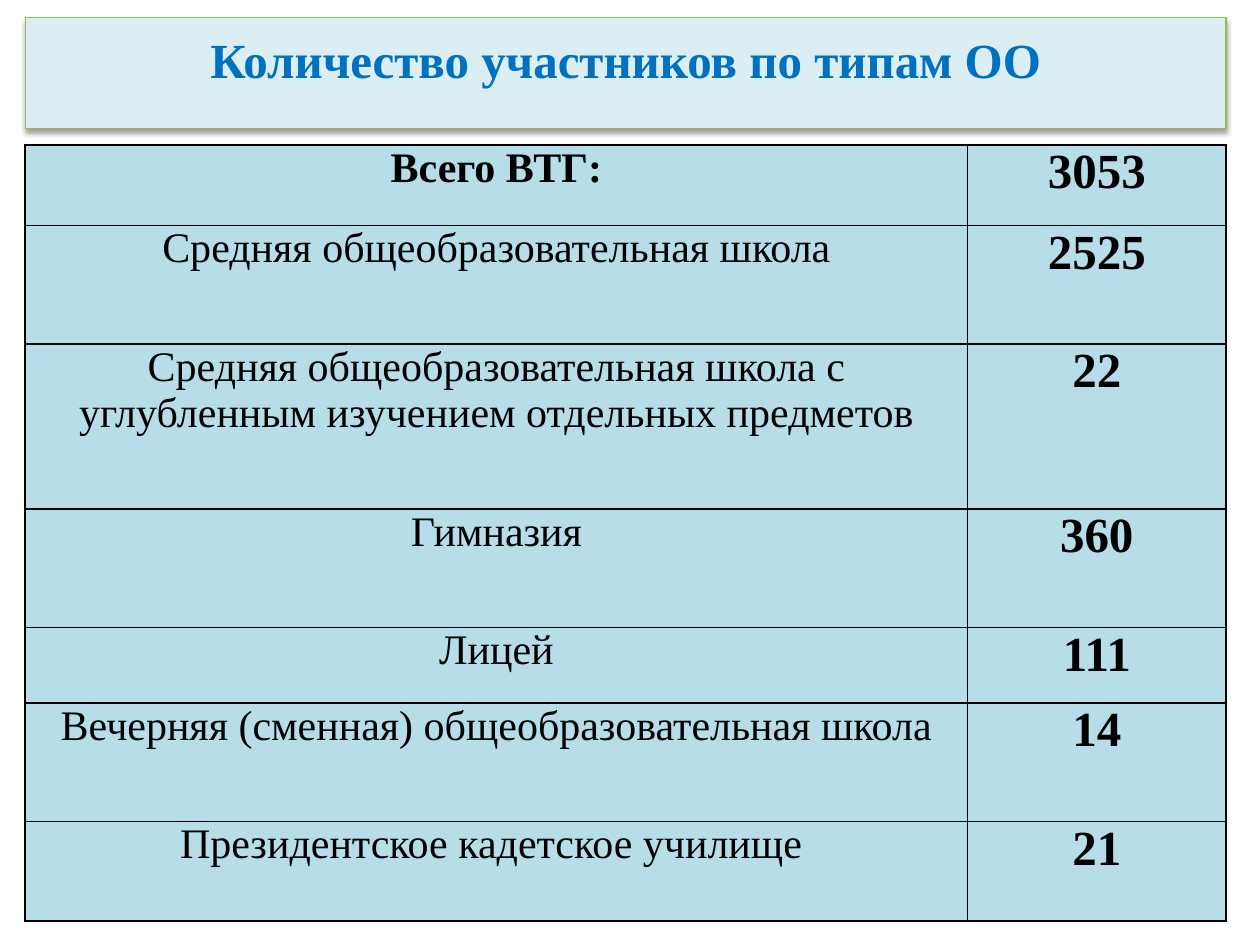
import dataclasses

import lxml.etree
import pptx
import pptx.dml.color
import pptx.enum.text
import pptx.oxml
import pptx.oxml.ns
import pptx.presentation
import pptx.slide
import pptx.table
import pptx.text.text
import pptx.util

Inches = pptx.util.Inches
Pt = pptx.util.Pt

FONT = "Times New Roman"
COLORS = {
    "title": "0070C0",
    "band": "DBEEF4",
    "edge": "98B955",
    "cell": "B7DEE8",
    "ink": "000000",
}
LEFT, WIDTH = 0.2, 9.53
COLS = (7.48, 2.05)


@dataclasses.dataclass
class Row:
    label: str
    count: int
    height: float
    bold: bool = False


ROWS = [
    Row("Всего ВТГ:", 3053, 0.64, True),
    Row("Средняя общеобразовательная школа", 2525, 0.94),
    Row("Средняя общеобразовательная школа с углубленным изучением отдельных предметов", 22, 1.31),
    Row("Гимназия", 360, 0.94),
    Row("Лицей", 111, 0.6),
    Row("Вечерняя (сменная) общеобразовательная школа", 14, 0.94),
    Row("Президентское кадетское училище ", 21, 0.79),
]


def shade(name: str) -> pptx.dml.color.RGBColor:
    return pptx.dml.color.RGBColor.from_string(COLORS[name])


def write(frame: pptx.text.text.TextFrame, text: str, *, size: int,
          color: str = "ink", bold: bool = False) -> None:
    line = frame.paragraphs[0]
    line.alignment = pptx.enum.text.PP_ALIGN.CENTER
    run = line.add_run()
    run.text = text
    run.font.name = FONT
    run.font.size = Pt(size)
    run.font.bold = bold
    run.font.color.rgb = shade(color)


def draw_title(slide: pptx.slide.Slide) -> None:
    title = slide.shapes.title
    title.left, title.top = Inches(LEFT), Inches(0.14)
    title.width, title.height = Inches(WIDTH), Inches(0.88)
    title.fill.solid()
    title.fill.fore_color.rgb = shade("band")
    title.line.color.rgb = shade("edge")
    title.line.width = Pt(0.75)
    title.element.spPr.append(pptx.oxml.parse_xml(
        f'<a:effectLst {pptx.oxml.ns.nsdecls("a")}>'
        f'<a:outerShdw blurRad="{Pt(3.1)}" dist="{Pt(1.6)}" dir="5400000" rotWithShape="0">'
        f'<a:srgbClr val="{COLORS["ink"]}"><a:alpha val="38000"/></a:srgbClr>'
        '</a:outerShdw></a:effectLst>'))
    frame = title.text_frame
    frame.auto_size = pptx.enum.text.MSO_AUTO_SIZE.NONE
    frame.vertical_anchor = pptx.enum.text.MSO_ANCHOR.TOP
    frame.margin_top = Inches(0.09)
    write(frame, "Количество участников по типам ОО", size=28, color="title", bold=True)


def add_edges(cell: pptx.table._Cell) -> None:
    props = cell._tc.get_or_add_tcPr()
    for spot, side in enumerate(("lnL", "lnR", "lnT", "lnB")):
        props.insert(spot, pptx.oxml.parse_xml(
            f'<a:{side} {pptx.oxml.ns.nsdecls("a")} w="{Pt(1)}"><a:solidFill>'
            f'<a:srgbClr val="{COLORS["ink"]}"/></a:solidFill></a:{side}>'))


def draw_cell(cell: pptx.table._Cell, text: str, size: int, bold: bool) -> None:
    cell.margin_left = cell.margin_right = Inches(0.07)
    cell.margin_top = cell.margin_bottom = 0
    cell.fill.solid()
    cell.fill.fore_color.rgb = shade("cell")
    add_edges(cell)
    write(cell.text_frame, text, size=size, bold=bold)


def draw_table(slide: pptx.slide.Slide) -> None:
    height = sum(row.height for row in ROWS)
    table = slide.shapes.add_table(
        len(ROWS), len(COLS), Inches(LEFT), Inches(1.15), Inches(WIDTH), Inches(height)).table
    for col, width in zip(table.columns, COLS):
        col.width = Inches(width)
    for spot, row in enumerate(ROWS):
        table.rows[spot].height = Inches(row.height)
        draw_cell(table.cell(spot, 0), row.label, 24, row.bold)
        draw_cell(table.cell(spot, 1), str(row.count), 28, True)


def main() -> None:
    deck = pptx.Presentation()
    deck.slide_width, deck.slide_height = Inches(10), Inches(7.5)
    slide = deck.slides.add_slide(deck.slide_layouts[5])
    draw_title(slide)
    draw_table(slide)
    deck.save("out.pptx")


if __name__ == "__main__":
    main()
